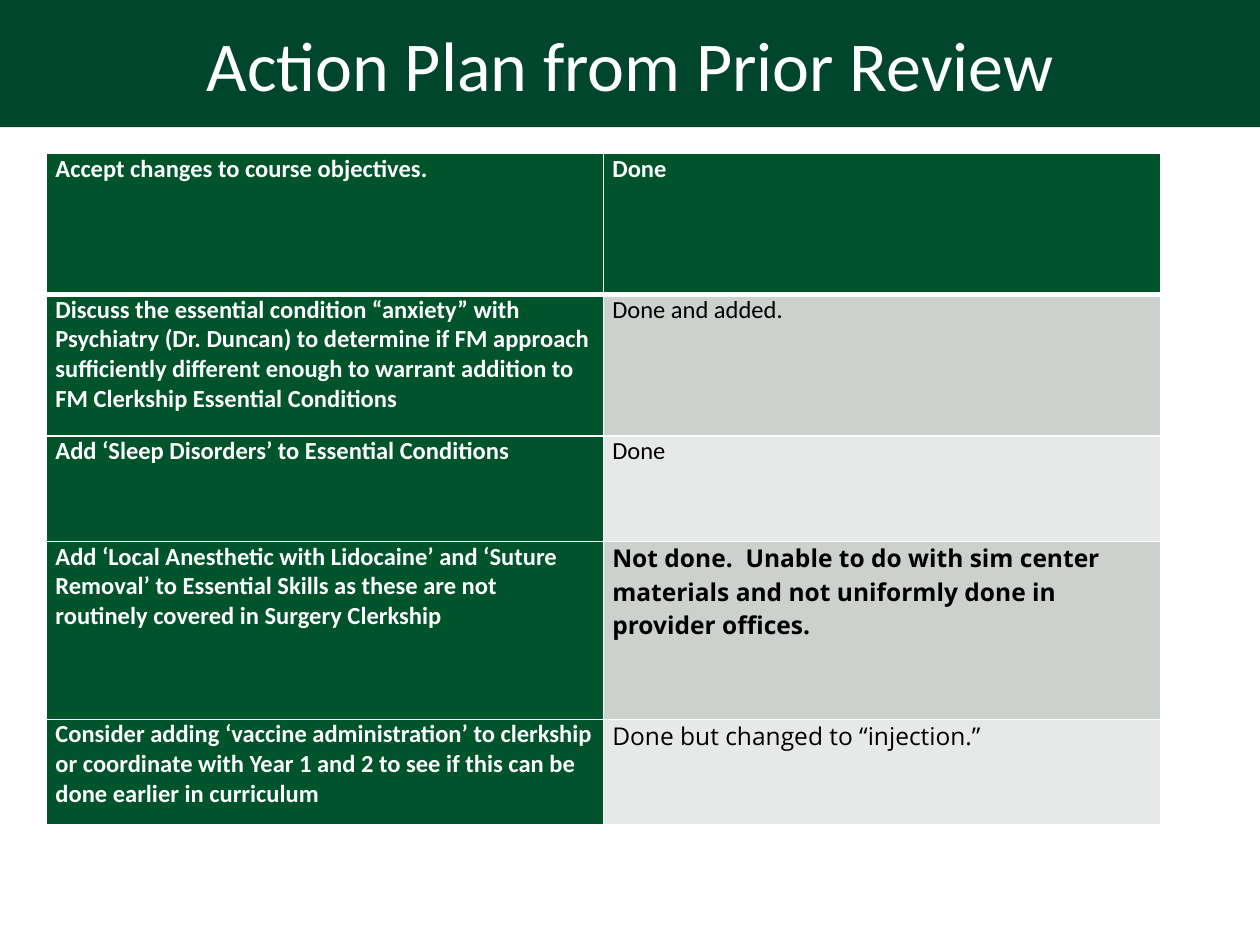
import pptx
import pptx.dml.color
import pptx.enum.shapes
import pptx.enum.text
import pptx.oxml.ns
import pptx.util
from lxml import etree
from pptx.util import Inches

WHITE = "FFFFFF"
BLACK = "000000"
TITLE_GREEN = "00462D"
TABLE_GREEN = "00542C"
BAND_COLORS = ["E7E9E8", "CCD1CD"]
ROW_HEIGHTS = [1.12, 1.12, 0.84, 1.41, 0.84]
COLUMN_WIDTH = 4.42

ACTIONS = [
    ("Accept changes to course objectives.", "Done", "Calibri", True),
    ("Discuss the essential condition “anxiety” with Psychiatry (Dr. Duncan) to determine "
     "if FM approach sufficiently different enough to warrant addition to FM Clerkship "
     "Essential Conditions", "Done and added.", "Calibri", False),
    ("Add ‘Sleep Disorders’ to Essential Conditions", "Done", "Calibri", False),
    ("Add ‘Local Anesthetic with Lidocaine’ and ‘Suture Removal’ to Essential Skills as "
     "these are not routinely covered in Surgery Clerkship",
     "Not done.  Unable to do with sim center materials and not uniformly done in "
     "provider offices.", "Open Sans", True),
    ("Consider adding ‘vaccine administration’ to clerkship or coordinate with Year 1 and 2 "
     "to see if this can be done earlier in curriculum",
     "Done but changed to “injection.”", "Open Sans", False),
]


def rgb(color):
    return pptx.dml.color.RGBColor.from_string(color)


def paint(fill, color):
    fill.solid()
    fill.fore_color.rgb = rgb(color)


def write(frame, text, size, color, font_name="Calibri", bold=False):
    frame.text = text
    font = frame.paragraphs[0].runs[0].font
    font.name = font_name
    font.size = pptx.util.Pt(size)
    font.bold = bold
    font.color.rgb = rgb(color)


def add_title(page, text):
    banner = page.shapes.add_shape(
        pptx.enum.shapes.MSO_SHAPE.RECTANGLE, 0, 0, Inches(10), Inches(1.01))
    banner.shadow.inherit = False
    paint(banner.fill, TITLE_GREEN)
    banner.line.fill.background()
    frame = banner.text_frame
    frame.word_wrap = True
    frame.vertical_anchor = pptx.enum.text.MSO_ANCHOR.MIDDLE
    write(frame, text, 40, WHITE)
    frame.paragraphs[0].alignment = pptx.enum.text.PP_ALIGN.CENTER


def add_borders(cell, widths):
    properties = cell._tc.get_or_add_tcPr()
    for side, width in widths.items():
        line = etree.SubElement(properties, pptx.oxml.ns.qn("a:ln" + side),
                                w=str(pptx.util.Pt(width)))
        fill = etree.SubElement(line, pptx.oxml.ns.qn("a:solidFill"))
        etree.SubElement(fill, pptx.oxml.ns.qn("a:srgbClr"), val=WHITE)


def fill_cell(cell, row, text, fill_color, text_color, font_name, bold):
    cell.margin_left = cell.margin_right = Inches(0.07)
    cell.margin_top = cell.margin_bottom = 0
    add_borders(cell, {"L": 1, "R": 1, "T": 3 if row == 1 else 1, "B": 3 if row == 0 else 1})
    paint(cell.fill, fill_color)
    write(cell.text_frame, text, 14, text_color, font_name, bold)


def add_action_table(page):
    frame = page.shapes.add_table(len(ACTIONS), 2, Inches(0.37), Inches(1.22),
                                  Inches(2 * COLUMN_WIDTH), Inches(sum(ROW_HEIGHTS)))
    table = frame.table
    for column in table.columns:
        column.width = Inches(COLUMN_WIDTH)
    for row, (action, status, status_font, status_bold) in enumerate(ACTIONS):
        table.rows[row].height = Inches(ROW_HEIGHTS[row])
        fill_cell(table.cell(row, 0), row, action, TABLE_GREEN, WHITE, "Calibri", True)
        status_fill = BAND_COLORS[row % 2] if row else TABLE_GREEN
        status_color = BLACK if row else WHITE
        fill_cell(table.cell(row, 1), row, status, status_fill, status_color,
                  status_font, status_bold)


def main():
    deck = pptx.Presentation()
    deck.slide_width = Inches(10)
    deck.slide_height = Inches(7.5)
    page = deck.slides.add_slide(deck.slide_layouts[6])
    add_title(page, "Action Plan from Prior Review")
    add_action_table(page)
    deck.save("out.pptx")


if __name__ == "__main__":
    main()
